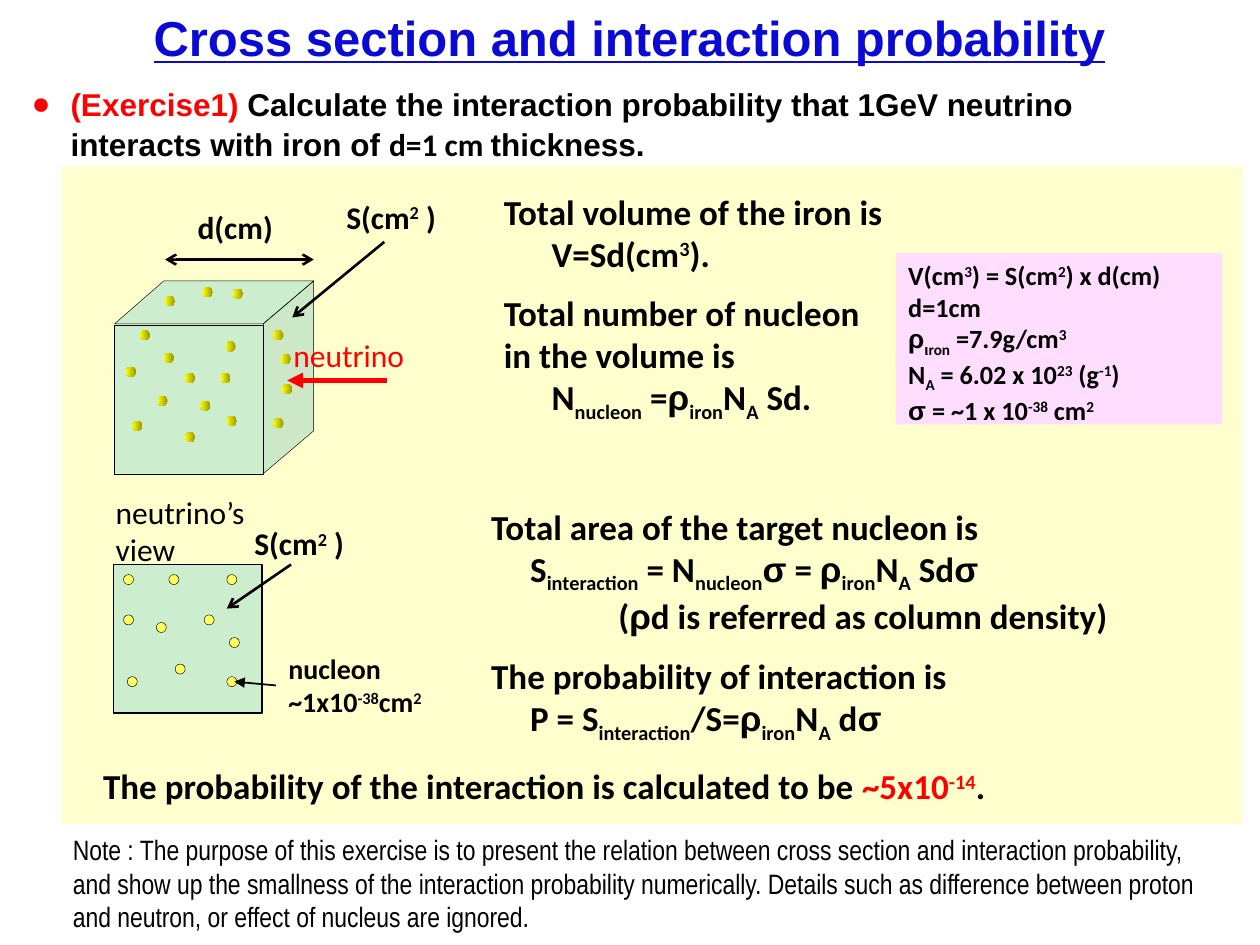
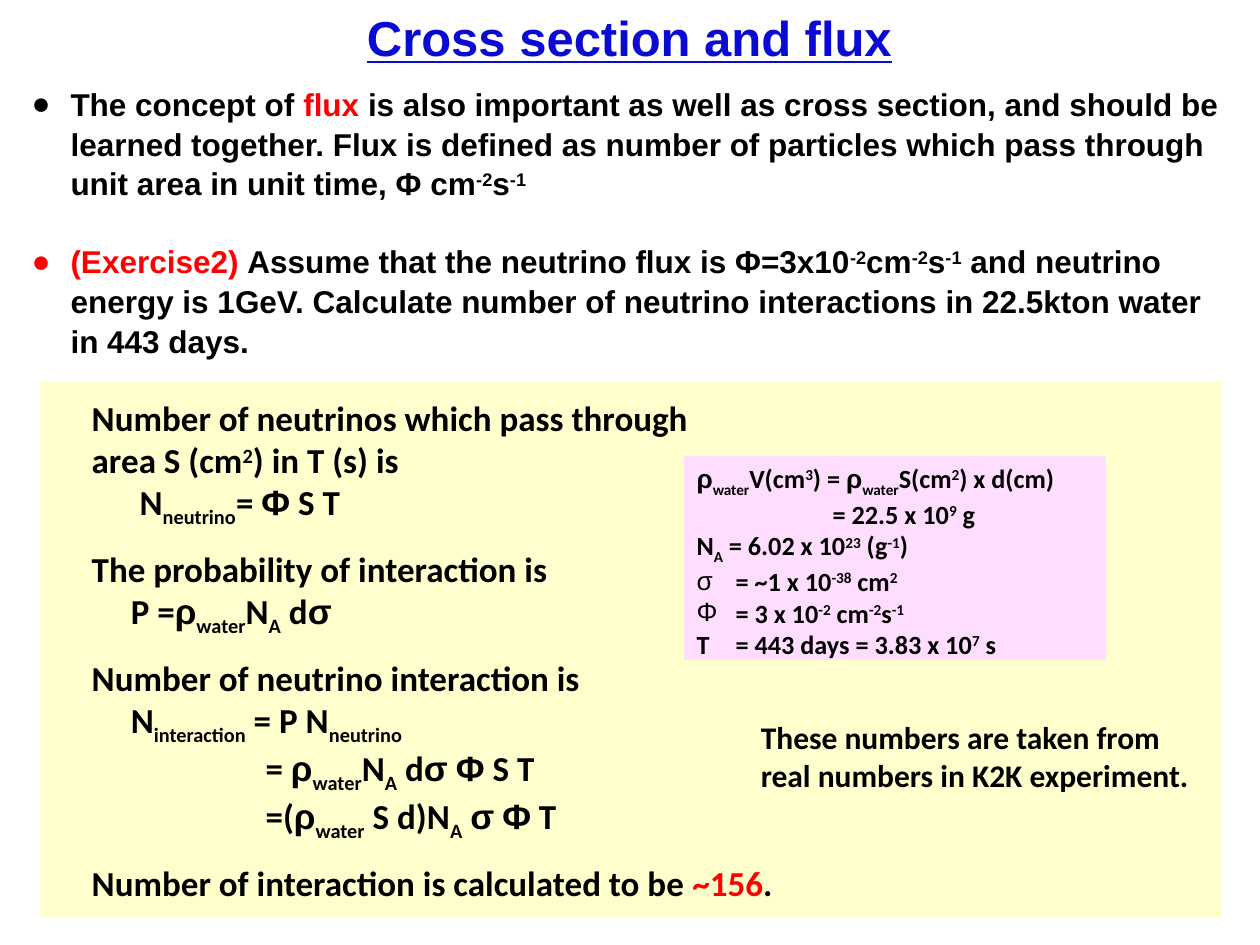
"""Build two slides on neutrino cross section, interaction probability and flux."""
from collections import namedtuple
from dataclasses import dataclass
from itertools import groupby

from lxml.etree import SubElement
from pptx import Presentation
from pptx.dml.color import RGBColor
from pptx.enum.shapes import MSO_CONNECTOR, MSO_SHAPE
from pptx.enum.text import MSO_ANCHOR, MSO_AUTO_SIZE, PP_ALIGN
from pptx.oxml.ns import qn
from pptx.util import Inches, Pt


@dataclass(frozen=True)
class Theme:
    title: str = "0A0AD4"
    ink: str = "000000"
    red: str = "FF0000"
    panel: str = "FFFFCD"
    facts: str = "FFDDFE"
    iron: str = "00AAD6"
    side: str = "008EB3"
    dark: str = "979700"
    glow: str = "FFFF00"
    dot: str = "FFFF61"
    sans: str = "Arial"
    math: str = "Calibri"
    slim: str = "Arial Narrow"
    head: int = 28
    main: int = 20
    body: int = 18
    small: int = 16
    fact: int = 15


T = Theme()
Line = namedtuple("Line", "text indent before hang bullet tint",
                  defaults=(0, 0, 0, None, T.ink))
Style = namedtuple("Style", "size font bold color", defaults=(True, T.ink))

MAIN = Style(T.main, T.math)
LABEL = Style(T.body, T.math)
PLAIN = Style(T.body, T.math, False)
BEAM = Style(T.body, T.math, False, T.red)
BODY = Style(T.body, T.sans)
HEAD = Style(T.head, T.sans, True, T.title)
FACT = Style(T.fact, T.math)
SMALL = Style(T.small, T.math)
NOTE = Style(T.small, T.slim, False)

GREEK = "ρσΦι"
MARKS = "^_!#"
HANG = 0.31
GAP = 10
GAP2 = 11
DOT = 0.08
SIDE = 1.18

AREA = [Line("S(cm|^2| )")]

PAGES = [
    dict(
        title="Cross section and interaction probability",
        body=(9.49, 0.71, [
            Line("!(Exercise1) |Calculate the interaction probability that 1GeV "
                 "neutrino interacts with iron of |#d=1 cm |thickness.",
                 HANG, 0, HANG, "●", T.red)]),
        panel=(0.49, 1.32, 9.37, 5.22),
        facts=((7.11, 2.01, 2.59, 1.36), [
            Line("V(cm|^3|) = S(cm|^2|) x d(cm)"),
            Line("d=1cm"),
            Line("ρ|_ιron| =7.9g/cm|^3"),
            Line("N|_A| = 6.02 x 10|^23| (g|^-1|)"),
            Line("σ = ~1 x 10|^-38| cm|^2")]),
        texts=[
            ((2.23, 2.62, 1.09, 0.4), BEAM, [Line("neutrino")]),
            ((0.82, 3.86, 1.31, 0.71), PLAIN, [Line("neutrino’s view")]),
            ((2.19, 5.12, 1.32, 0.64), SMALL, [
                Line("nucleon"), Line("~1x10|^-38|cm|^2")]),
            ((1.47, 1.6, 0.97, 0.4), LABEL, [Line("d(cm)")]),
            ((2.65, 1.52, 1.16, 0.4), LABEL, AREA),
            ((1.92, 4.11, 1.16, 0.4), LABEL, AREA),
            ((3.9, 1.46, 5.07, 1.92), MAIN, [
                Line("Total volume of the iron is"),
                Line("V=Sd(cm|^3|).", 0.38),
                Line("Total number of nucleon", 0, GAP),
                Line("in the volume is"),
                Line("N|_nucleon| =ρ|_iron|N|_A| Sd.", 0.38)]),
            ((3.8, 3.96, 5.87, 2.22), MAIN, [
                Line("Total area of the target nucleon is"),
                Line("S|_interaction| = N|_nucleon|σ = ρ|_iron|N|_A| Sdσ", 0.31),
                Line("(ρd is referred as column density)", 1.01),
                Line("The probability of interaction is", 0, GAP),
                Line("P = S|_interaction|/S=ρ|_iron|N|_A| dσ", 0.31)]),
            ((0.72, 6.02, 8.31, 0.44), MAIN, [
                Line("The probability of the interaction is calculated to be "
                     "|!~5x10|!^-14|.")]),
            ((0.48, 6.56, 9.36, 0.91), NOTE, [
                Line("Note : The purpose of this exercise is to present the relation "
                     "between cross section and interaction probability,"),
                Line("and show up the smallness of the interaction probability "
                     "numerically. Details such as difference between proton and "
                     "neutron, or effect of nucleus are ignored.")]),
        ],
    ),
    dict(
        title="Cross section and flux",
        body=(9.85, 2.22, [
            Line("The concept of |!flux| is also important as well as cross section, "
                 "and should be learned together. Flux is defined as number of "
                 "particles which pass through unit area in unit time, "
                 "Φ cm|^-2|s|^-1", HANG, 0, HANG, "●"),
            Line("!(Exercise2) |Assume that the neutrino flux is Φ=3x10|^-2|cm|^-2|s"
                 "|^-1| and neutrino energy is 1GeV. Calculate number of neutrino "
                 "interactions in 22.5kton water|\n|in 443 days.",
                 HANG, 21.8, HANG, "●", T.red)]),
        panel=(0.32, 3.03, 9.37, 4.25),
        facts=((5.43, 3.62, 3.35, 1.62), [
            Line("ρ|_water|V(cm|^3|) = ρ|_water|S(cm|^2|) x d(cm)"),
            Line("= 22.5 x 10|^9| g", 1.08),
            Line("N|_A| = 6.02 x 10|^23| (g|^-1|)"),
            Line("= ~1 x 10|^-38| cm|^2", HANG, 0, HANG, "σ"),
            Line("= 3 x 10|^-2| cm|^-2|s|^-1", HANG, 0, HANG, "Φ"),
            Line("T\t= 443 days = 3.83 x 10|^7| s", HANG, 0, HANG)]),
        texts=[
            ((0.63, 3.1, 6.26, 3.92), MAIN, [
                Line("Number of neutrinos which pass through"),
                Line("area S (cm|^2|) in T (s) is"),
                Line("N|_neutrino|= Φ S T", 0.38),
                Line("The probability of interaction is", 0, GAP2),
                Line("P =ρ|_water|N|_A| dσ", 0.31),
                Line("Number of neutrino interaction is", 0, GAP2),
                Line("N|_interaction| = P N|_neutrino", 0.31),
                Line("= ρ|_water|N|_A| dσ Φ S T", 1.38),
                Line("=(ρ|_water| S d)N|_A| σ Φ T", 1.38),
                Line("Number of interaction is calculated to be |!~156|.", 0, GAP2)]),
            ((5.94, 5.65, 3.76, 0.71), LABEL, [
                Line("These numbers are taken from real numbers in K2K experiment.")]),
        ],
    ),
]

FACES = [
    (T.iron, [(0.91, 2.58), (2.09, 2.58), (2.09, 3.76), (0.91, 3.76)]),
    (T.iron, [(2.49, 2.23), (1.3, 2.23), (0.91, 2.57), (2.09, 2.57)]),
    (T.side, [(2.49, 2.23), (2.09, 2.57), (2.09, 3.76), (2.49, 3.42)]),
]
ATOMS = [(1.3, 2.8), (1.47, 3.43), (1, 2.91), (1.59, 3.18), (1.79, 2.71),
         (2.24, 3.05), (2.17, 2.62), (1.25, 3.14), (1.75, 2.96), (1.8, 3.3),
         (1.05, 3.34), (1.47, 2.96), (1.11, 2.62), (1.31, 2.35), (1.85, 2.29),
         (2.23, 2.81), (1.61, 2.28), (2.17, 3.32)]
VIEW = (0.9, 4.48)
SPOTS = [(0.98, 4.56), (1.8, 4.56), (1.82, 5.06), (1.8, 5.37), (1.01, 5.37),
         (0.98, 4.88), (1.39, 5.27), (1.62, 4.88), (1.24, 4.94), (1.34, 4.56)]
ARROWS = [
    ((3.07, 3.02), (2.28, 3.02), T.red, 3, {"tailEnd": "triangle"}),
    ((2.19, 5.44), (1.86, 5.41), T.ink, 1, {"tailEnd": "triangle"}),
    ((1.31, 2.06), (2.49, 2.06), T.ink, 1.5, {"headEnd": "arrow", "tailEnd": "arrow"}),
    ((2.32, 2.52), (3.05, 1.92), T.ink, 1.5, {"headEnd": "arrow"}),
    ((1.8, 4.83), (2.31, 4.48), T.ink, 1.5, {"headEnd": "arrow"}),
]


def rgb(code):
    """Turn a hex code into a colour."""
    return RGBColor.from_string(code)


def emu(nums):
    """Turn inches into lengths."""
    return [Inches(n) for n in nums]


def add_runs(para, text, style):
    """Add the marked-up pieces of a line as runs."""
    for piece in text.split("|"):
        if piece == "\n":
            para.add_line_break()
            continue
        words = piece.lstrip(MARKS)
        marks = piece[:len(piece) - len(words)]
        face = T.math if "#" in marks else style.font
        for greek, part in groupby(words, lambda sign: sign in GREEK):
            run = para.add_run()
            run.text = "".join(part)
            font = run.font
            font.size, font.bold = Pt(style.size), style.bold
            font.name = T.sans if greek else face
            font.color.rgb = rgb(T.red if "!" in marks else style.color)
            shift = 30000 if "^" in marks else -25000 if "_" in marks else 0
            if shift:
                font._element.set("baseline", str(shift))


def write(frame, lines, style, space=1.0):
    """Fill a text frame with lines."""
    frame.word_wrap = True
    frame.auto_size = MSO_AUTO_SIZE.NONE
    frame.vertical_anchor = MSO_ANCHOR.TOP
    for num, line in enumerate(lines):
        para = frame.add_paragraph() if num else frame.paragraphs[0]
        para.alignment = PP_ALIGN.LEFT
        para.space_before, para.line_spacing = Pt(line.before), space
        props = para._p.get_or_add_pPr()
        props.set("marL", str(Inches(line.indent)))
        props.set("indent", str(-Inches(line.hang)))
        if line.bullet:
            tint = SubElement(props, qn("a:buClr"))
            SubElement(tint, qn("a:srgbClr"), val=line.tint)
            SubElement(props, qn("a:buFont"), typeface=T.sans)
            SubElement(props, qn("a:buChar"), char=line.bullet)
        add_runs(para, line.text, style)


def paint(shape, color, width=0, alpha=None):
    """Set the fill and outline of a shape."""
    shape.shadow.inherit = False
    shape.fill.solid()
    shape.fill.fore_color.rgb = rgb(color)
    if alpha:
        tone = shape._element.spPr.find(qn("a:solidFill"))[0]
        SubElement(tone, qn("a:alpha"), val=str(alpha * 1000))
    if width:
        shape.line.color.rgb = rgb(T.ink)
        shape.line.width = Pt(width)
    else:
        shape.line.fill.background()
    return shape


def add_face(shapes, color, points, width):
    """Draw one see-through face of the iron."""
    dots = [tuple(emu(point)) for point in points]
    pen = shapes.build_freeform(*dots[0])
    pen.add_line_segments(dots[1:], close=True)
    paint(pen.convert_to_shape(), color, width, 20)


def add_dot(shapes, spot, width=0):
    """Draw one nucleon."""
    oval = shapes.add_shape(MSO_SHAPE.OVAL, *emu((*spot, DOT, DOT)))
    return paint(oval, T.dot, width)


def add_arrow(shapes, start, end, color, width, tips):
    """Draw a line with arrowheads."""
    line = shapes.add_connector(MSO_CONNECTOR.STRAIGHT, *emu(start + end))
    line.line.color.rgb = rgb(color)
    line.line.width = Pt(width)
    props = line._element.spPr
    for tip, kind in tips.items():
        SubElement(props.find(qn("a:ln")), qn("a:" + tip), type=kind)
    SubElement(props, qn("a:effectLst"))


def draw_iron(shapes):
    """Draw the iron block and the view along the beam."""
    block = shapes.add_group_shape().shapes
    for color, points in FACES:
        add_face(block, color, points, 0.25)
    for spot in ATOMS:
        fill = add_dot(block, spot).fill
        fill.gradient()
        fill.gradient_angle = 180
        for stop, color in zip(fill.gradient_stops, (T.dark, T.glow)):
            stop.color.rgb = rgb(color)
    view = shapes.add_group_shape().shapes
    left, top = VIEW
    right, base = left + SIDE, top + SIDE
    add_face(view, T.iron, [VIEW, (right, top), (right, base), (left, base)], 0.75)
    for spot in SPOTS:
        add_dot(view, spot, 0.25)
    for arrow in ARROWS:
        add_arrow(shapes, *arrow)


def place(shape, at):
    """Move and size a shape."""
    shape.left, shape.top, shape.width, shape.height = emu(at)
    return shape.text_frame


def add_page(deck, page):
    """Add a slide with its title, list, panel and facts."""
    slide = deck.slides.add_slide(deck.slide_layouts[1])
    shapes = slide.shapes
    frame = place(shapes.title, (0.27, 0.01, 9.45, 0.57))
    write(frame, [Line(page["title"])], HEAD)
    frame.vertical_anchor = MSO_ANCHOR.MIDDLE
    frame.paragraphs[0].alignment = PP_ALIGN.CENTER
    frame.paragraphs[0].runs[0].font.underline = True
    width, height, lines = page["body"]
    write(place(slide.placeholders[1], (0.15, 0.61, width, height)), lines, BODY, 1.05)
    paint(shapes.add_shape(MSO_SHAPE.RECTANGLE, *emu(page["panel"])), T.panel)
    at, lines = page["facts"]
    facts = paint(shapes.add_shape(MSO_SHAPE.RECTANGLE, *emu(at)), T.facts)
    write(facts.text_frame, lines, FACT)
    return shapes


def main():
    """Build and save the deck."""
    deck = Presentation()
    deck.slide_width, deck.slide_height = emu((10, 7.5))
    for num, page in enumerate(PAGES):
        shapes = add_page(deck, page)
        if num == 0:
            draw_iron(shapes)
        for at, style, lines in page["texts"]:
            write(shapes.add_textbox(*emu(at)).text_frame, lines, style)
    deck.save("out.pptx")


if __name__ == "__main__":
    main()
